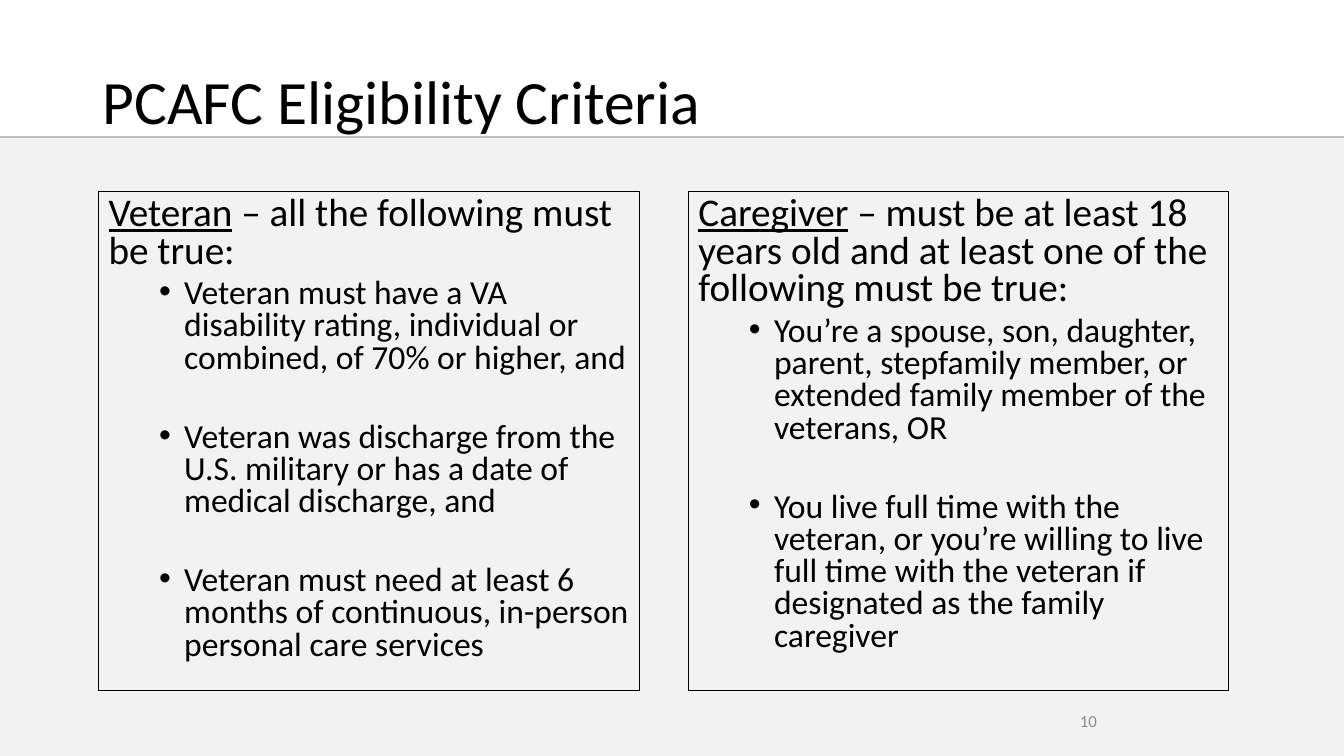
from lxml.etree import SubElement
from pptx import Presentation
from pptx.dml.color import RGBColor
from pptx.enum.shapes import MSO_CONNECTOR, MSO_SHAPE
from pptx.enum.text import MSO_ANCHOR as Anchor, MSO_AUTO_SIZE as AutoSize, PP_ALIGN as Align
from pptx.oxml.ns import qn
from pptx.util import Pt

TITLE = "PCAFC Eligibility Criteria"
PAGE_NUMBER = "10"
PANELS = [
    ("Veteran", " – all the following must be true:", [
        "Veteran must have a VA disability rating, individual or combined, of 70% or higher, and",
        "Veteran was discharge from the U.S. military or has a date of medical discharge, and",
        "Veteran must need at least 6 months of continuous, in-person personal care services",
    ]),
    ("Caregiver", " – must be at least 18 years old and at least one of the following must be true:", [
        "You’re a spouse, son, daughter, parent, stepfamily member, or extended family member of the veterans, OR",
        "You live full time with the veteran, or you’re willing to live full time with the veteran "
        "if designated as the family caregiver",
    ]),
]
COLORS = {"text": "000000", "band": "F2F2F2", "rule": "BFBFBF", "number": "8C8C8C"}
FONT = "Calibri"
WIDTH, HEIGHT = 960, 540
RULE_TOP = 98
PANEL_LEFT, PANEL_TOP, PANEL_WIDTH, PANEL_HEIGHT = 70.5, 136.8, 386, 356.4
PANEL_STEP = 421.3
BULLET_MARGIN, BULLET_INDENT = 54, -18
FIRST_GAP, ITEM_GAP = 5, 33.4


def color(name):
    return RGBColor.from_string(COLORS[name])


def add_run(paragraph, text, size, color_name="text", underline=None):
    run = paragraph.add_run()
    run.text = text
    run.font.name = FONT
    run.font.size = Pt(size)
    run.font.color.rgb = color(color_name)
    run.font.underline = underline


def set_bullet(paragraph):
    properties = paragraph._p.get_or_add_pPr()
    properties.set("marL", str(Pt(BULLET_MARGIN)))
    properties.set("indent", str(Pt(BULLET_INDENT)))
    SubElement(properties, qn("a:buFont")).set("typeface", "Arial")
    SubElement(properties, qn("a:buChar")).set("char", "•")


def add_background(slide):
    band = slide.shapes.add_shape(
        MSO_SHAPE.RECTANGLE, 0, Pt(RULE_TOP), Pt(WIDTH), Pt(HEIGHT - RULE_TOP))
    band.shadow.inherit = False
    band.fill.solid()
    band.fill.fore_color.rgb = color("band")
    band.line.fill.background()
    rule = slide.shapes.add_connector(
        MSO_CONNECTOR.STRAIGHT, 0, Pt(RULE_TOP), Pt(WIDTH), Pt(RULE_TOP))
    rule.line.color.rgb = color("rule")
    rule.line.width = Pt(1.5)
    SubElement(rule._element.spPr, qn("a:effectLst"))


def add_title(slide):
    title = slide.shapes.title
    slide.shapes._spTree.append(title._element)
    title.left, title.top, title.width, title.height = Pt(66.2), Pt(38.2), Pt(515.5), Pt(73.4)
    frame = title.text_frame
    frame.word_wrap = True
    frame.auto_size = AutoSize.NONE
    frame.vertical_anchor = Anchor.MIDDLE
    paragraph = frame.paragraphs[0]
    paragraph.alignment = Align.LEFT
    paragraph.line_spacing = 0.9
    add_run(paragraph, TITLE, 44)


def add_panel(slide, left, subject, condition, items):
    panel = slide.shapes.add_textbox(Pt(left), Pt(PANEL_TOP), Pt(PANEL_WIDTH), Pt(PANEL_HEIGHT))
    panel.line.color.rgb = color("text")
    panel.line.width = Pt(0.75)
    frame = panel.text_frame
    frame.word_wrap = True
    heading = frame.paragraphs[0]
    heading.line_spacing = 0.8
    add_run(heading, subject, 28, underline=True)
    add_run(heading, condition, 28)
    for index, item in enumerate(items):
        paragraph = frame.add_paragraph()
        set_bullet(paragraph)
        paragraph.level = 1
        paragraph.line_spacing = 0.8
        paragraph.space_before = Pt(ITEM_GAP if index else FIRST_GAP)
        add_run(paragraph, item, 24)


def add_page_number(slide):
    box = slide.shapes.add_textbox(Pt(628.6), Pt(500.4), Pt(162), Pt(28.8))
    box.text_frame.word_wrap = True
    box.text_frame.vertical_anchor = Anchor.MIDDLE
    paragraph = box.text_frame.paragraphs[0]
    paragraph.alignment = Align.RIGHT
    add_run(paragraph, PAGE_NUMBER, 12, "number")


def main():
    presentation = Presentation()
    presentation.slide_width, presentation.slide_height = Pt(WIDTH), Pt(HEIGHT)
    slide = presentation.slides.add_slide(presentation.slide_layouts[5])
    add_background(slide)
    add_title(slide)
    for index, panel in enumerate(PANELS):
        add_panel(slide, PANEL_LEFT + index * PANEL_STEP, *panel)
    add_page_number(slide)
    presentation.save("out.pptx")


if __name__ == "__main__":
    main()
